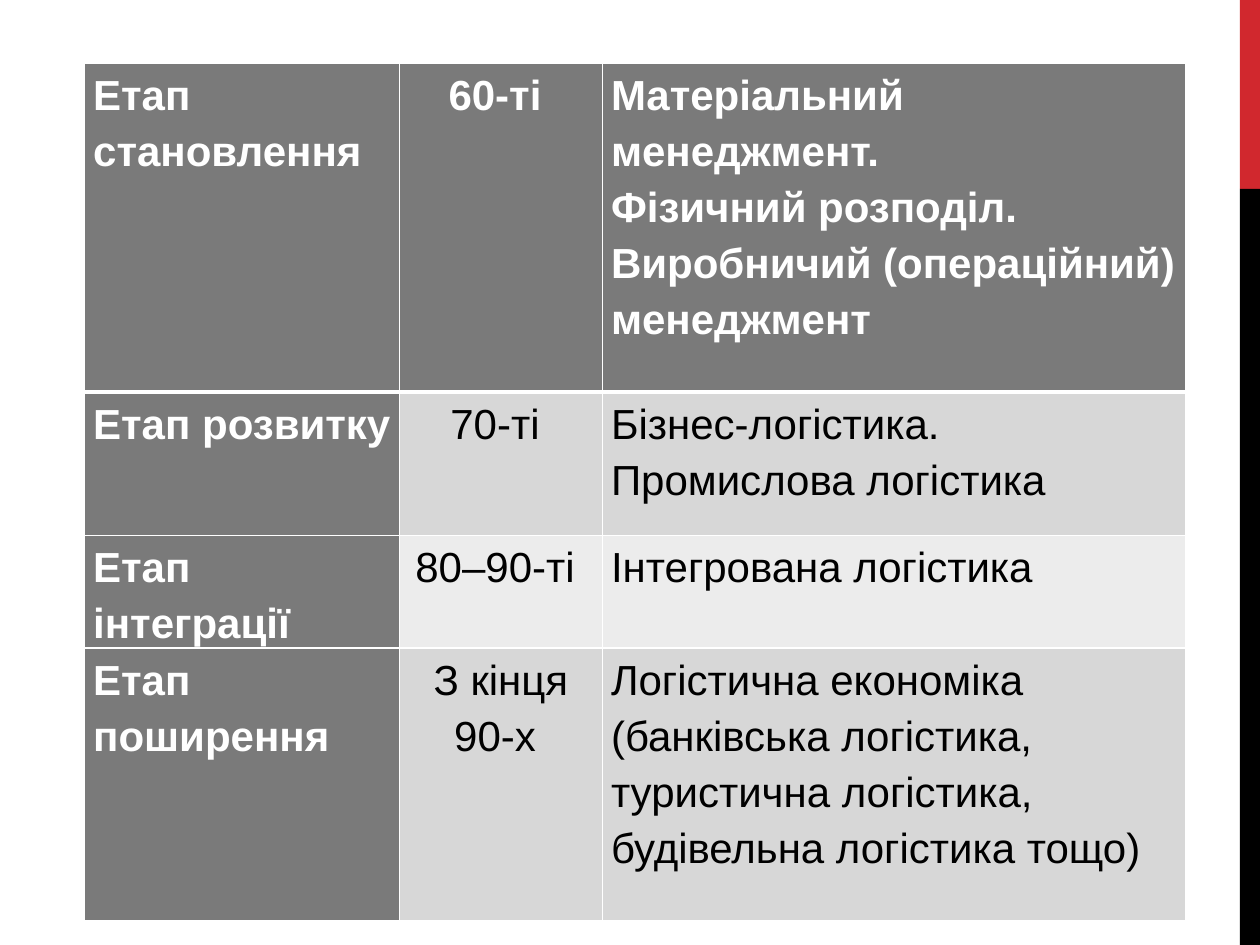
from lxml.etree import SubElement
from pptx import Presentation
from pptx.dml.color import RGBColor
from pptx.enum.shapes import MSO_SHAPE
from pptx.enum.text import PP_ALIGN
from pptx.oxml.ns import qn
from pptx.util import Inches, Pt

COLORS = {
    "red": "D1282E",
    "black": "000000",
    "white": "FFFFFF",
    "header": "7A7A7A",
    "band_dark": "D7D7D7",
    "band_light": "ECECEC",
}
STAGES = [
    ("Етап становлення", "60-ті ",
     "Матеріальний менеджмент.\nФізичний розподіл.\nВиробничий (операційний) менеджмент"),
    ("Етап розвитку", "70-ті ", "Бізнес-логістика.\nПромислова логістика"),
    ("Етап інтеграції", "80–90-ті ", "Інтегрована логістика"),
    ("Етап поширення", "З кінця 90-х ",
     "Логістична економіка (банківська логістика, туристична логістика, "
     "будівельна логістика тощо)"),
]
COLUMN_WIDTHS = [2.5, 1.61, 4.63]
ROW_HEIGHTS = [2.61, 1.14, 0.84, 2.17]


def set_borders(cell, widths):
    properties = cell._tc.get_or_add_tcPr()
    for side, width in widths.items():
        line = SubElement(properties, qn(f"a:ln{side}"), w=str(Pt(width)))
        fill = SubElement(line, qn("a:solidFill"))
        SubElement(fill, qn("a:srgbClr"), val=COLORS["white"])


presentation = Presentation()
presentation.slide_width = Inches(10)
presentation.slide_height = Inches(7.5)
slide = presentation.slides.add_slide(presentation.slide_layouts[6])

for color, top, height in [("red", 0, 1.5), ("black", 1.5, 6)]:
    bar = slide.shapes.add_shape(
        MSO_SHAPE.RECTANGLE, Inches(9.84), Inches(top), Inches(0.16), Inches(height))
    bar.shadow.inherit = False
    bar.fill.solid()
    bar.fill.fore_color.rgb = RGBColor.from_string(COLORS[color])
    bar.line.fill.background()

table = slide.shapes.add_table(
    len(STAGES), len(COLUMN_WIDTHS), Inches(0.67), Inches(0.5),
    Inches(sum(COLUMN_WIDTHS)), Inches(sum(ROW_HEIGHTS))).table
table.first_col = True
for column, width in zip(table.columns, COLUMN_WIDTHS):
    column.width = Inches(width)
for row, height in zip(table.rows, ROW_HEIGHTS):
    row.height = Inches(height)

for row_index, stage in enumerate(STAGES):
    for column_index, text in enumerate(stage):
        cell = table.cell(row_index, column_index)
        is_header = row_index == 0 or column_index == 0
        band = "band_dark" if row_index % 2 else "band_light"
        set_borders(cell, {
            "L": 1,
            "R": 1,
            "T": 3 if row_index == 1 else 1,
            "B": 3 if row_index == 0 else 1,
        })
        cell.fill.solid()
        cell.fill.fore_color.rgb = RGBColor.from_string(
            COLORS["header" if is_header else band])
        cell.margin_left = cell.margin_right = Inches(0.07)
        cell.margin_top = cell.margin_bottom = 0
        cell.text_frame.text = text
        for paragraph in cell.text_frame.paragraphs:
            paragraph.line_spacing = 1.2
            paragraph.alignment = PP_ALIGN.CENTER if column_index == 1 else PP_ALIGN.LEFT
            for run in paragraph.runs:
                run.font.name = "Arial"
                run.font.size = Pt(24)
                run.font.bold = is_header
                run.font.color.rgb = RGBColor.from_string(
                    COLORS["white" if is_header else "black"])

presentation.save("out.pptx")
